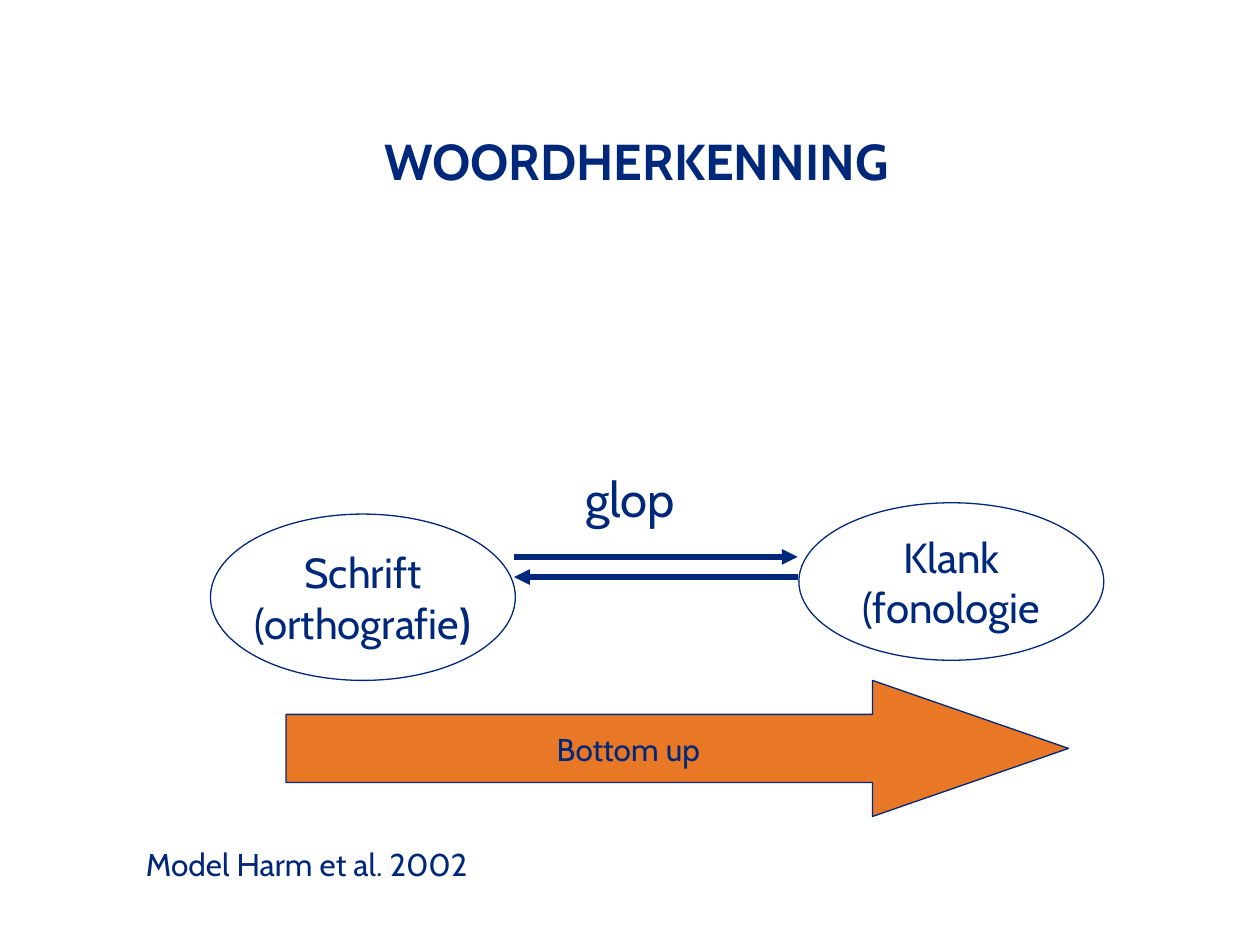
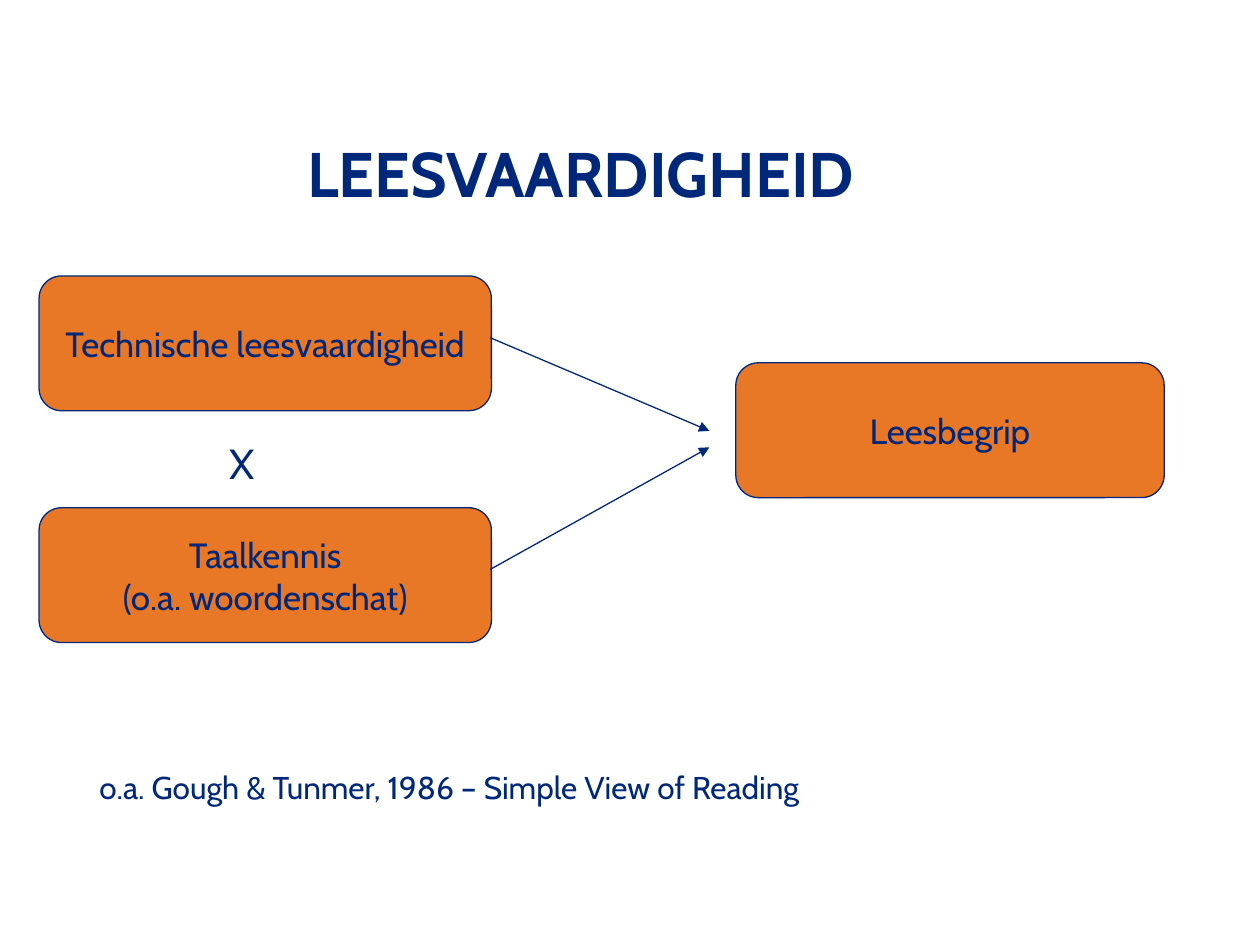
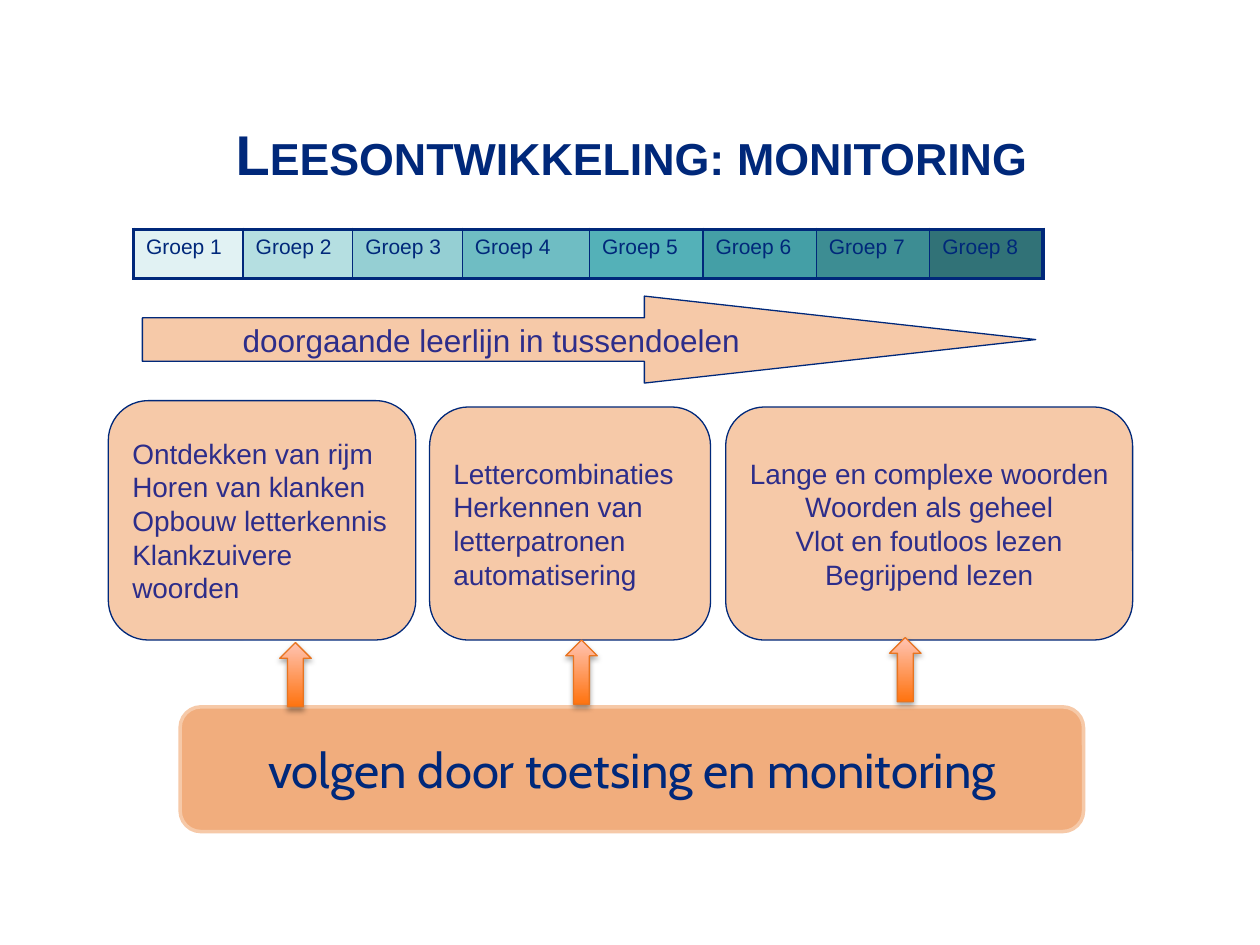
from lxml.etree import SubElement as Sub
from pptx import Presentation
from pptx.dml.color import RGBColor as RGB
from pptx.enum.shapes import MSO_CONNECTOR as Link, MSO_SHAPE as Kind
from pptx.enum.text import MSO_ANCHOR as Anchor, MSO_AUTO_SIZE as Fit, PP_ALIGN as Align
from pptx.oxml.ns import qn
from pptx.util import Inches, Pt

# Shared look
NAVY = RGB(0x00, 0x28, 0x7A)
INDIGO = RGB(0x2D, 0x2D, 0x8A)
ORANGE = RGB(0xE8, 0x77, 0x26)
PEACH = RGB(0xF6, 0xC9, 0xA8)
APRICOT = RGB(0xF1, 0xAD, 0x7D)
RUST = RGB(0xE8, 0x74, 0x20)
FLAME = RGB(0xFF, 0x73, 0x0F)
BLUSH = RGB(0xFF, 0xC4, 0xB3)
TEALS = [RGB.from_string(h) for h in (
    "E1F2F3", "B5DFE1", "95CFD3", "6FBDC3", "54B1B8", "449FA6", "3D8D93", "317277")]
CABIN, ARIAL = "Cabin", "Arial"

# Grid of 100 columns by 75 rows
WIDE, HIGH = Inches(10), Inches(7.5)
COL, ROW = WIDE / 100, HIGH / 75


def grid(x, y, w, h):
    return int(x * COL), int(y * ROW), int(w * COL), int(h * ROW)


def style(par, size, face=CABIN, color=NAVY, align=Align.CENTER):
    par.alignment = align
    par.font.size, par.font.name = Pt(size), face
    par.font.color.rgb = color


def write(frame, lines, size, face=CABIN, color=NAVY, align=Align.CENTER, wrap=True):
    frame.word_wrap = wrap
    for i, line in enumerate(lines):
        par = frame.add_paragraph() if i else frame.paragraphs[0]
        par.add_run().text = line
        style(par, size, face, color, align)


def title(slide, text, at, size, face=CABIN, small=False, flush=True):
    head = slide.shapes.title
    head.left, head.top, head.width, head.height = grid(*at)
    frame = head.text_frame
    frame.auto_size, frame.vertical_anchor = Fit.NONE, Anchor.MIDDLE
    if flush:
        frame.margin_left = frame.margin_top = frame.margin_bottom = 0
    write(frame, [text], size, face)
    par = frame.paragraphs[0]
    par.font.bold = True
    if small:
        par.runs[0]._r.get_or_add_rPr().set("cap", "small")


def label(slide, text, at, size, align=Align.LEFT):
    box = slide.shapes.add_textbox(*grid(*at))
    write(box.text_frame, [text], size, align=align)


def node(slide, kind, at, fill=None, line=NAVY, weight=0.75, adj=()):
    shape = slide.shapes.add_shape(kind, *grid(*at))
    shape.shadow.inherit = False
    if fill is None:
        shape.fill.background()
    else:
        shape.fill.solid()
        shape.fill.fore_color.rgb = fill
    shape.line.color.rgb, shape.line.width = line, Pt(weight)
    for i, value in enumerate(adj):
        shape.adjustments[i] = value
    shape.text_frame.vertical_anchor = Anchor.MIDDLE
    return shape


def arrow(slide, start, end, weight):
    (ax, ay, bx, by) = grid(*start, *end)
    link = slide.shapes.add_connector(Link.STRAIGHT, ax, ay, bx, by)
    link.line.color.rgb, link.line.width = NAVY, Pt(weight)
    props = link.element.spPr
    Sub(props.find(qn("a:ln")), qn("a:tailEnd"), type="triangle")
    Sub(props, qn("a:effectLst"))


def riser(slide, at):
    """Upward block arrow with a gradient and a soft shadow."""
    shape = node(slide, Kind.UP_ARROW, at, line=RUST)
    shape.fill.gradient()
    shape.fill.gradient_angle = 90
    for stop, color in zip(shape.fill.gradient_stops, (FLAME, BLUSH)):
        stop.color.rgb = color
    shade = Sub(shape.element.spPr.find(qn("a:effectLst")), qn("a:outerShdw"),
                blurRad=str(Pt(3.1)), dist=str(Pt(1.8)), dir="5400000", rotWithShape="0")
    Sub(Sub(shade, qn("a:srgbClr"), val="000000"), qn("a:alpha"), val="35000")


def edge(cell, side, weight):
    line = Sub(cell._tc.get_or_add_tcPr(), qn("a:" + side), w=str(Pt(weight)))
    Sub(Sub(line, qn("a:solidFill")), qn("a:srgbClr"), val=str(NAVY))


def groups(slide, at, widths):
    """One row of school years, from light to dark."""
    last = len(widths) - 1
    table = slide.shapes.add_table(1, last + 1, *grid(*at)).table
    table.first_row = table.horz_banding = False
    for i, (width, color) in enumerate(zip(widths, TEALS)):
        table.columns[i].width = int(width * COL)
        cell = table.cell(0, i)
        write(cell.text_frame, [f"Groep {i + 1}"], 12, ARIAL, align=Align.LEFT)
        edge(cell, "lnL", 1 if i else 2.25)
        edge(cell, "lnR", 1 if i < last else 2.25)
        edge(cell, "lnT", 2.25)
        edge(cell, "lnB", 2.25)
        cell.fill.solid()
        cell.fill.fore_color.rgb = color


def words(slide):
    title(slide, "woordherkenning", (6, 6.1, 90, 12.5), 36, small=True)
    # Script and sound
    script = node(slide, Kind.OVAL, (16.7, 40.8, 24.2, 13.2)).text_frame
    write(script, ["Schrift", "(orthografie"], 24, wrap=False)
    close = script.paragraphs[1].add_run()
    close.text, close.font.bold = ")", True
    sound = node(slide, Kind.OVAL, (63.4, 39.9, 24.2, 12.5))
    write(sound.text_frame, ["Klank", "(fonologie"], 24, wrap=False)
    arrow(slide, (40.8, 44.2), (63.3, 44.2), 3)
    arrow(slide, (63.3, 45.8), (40.8, 45.8), 3)
    label(slide, "glop", (30, 36.7, 40, 5.7), 28, Align.CENTER)
    # Direction and citation
    path = node(slide, Kind.RIGHT_ARROW, (22.7, 54, 62.1, 10.8), ORANGE, adj=(0.5, 1.44))
    write(path.text_frame, ["Bottom up"], 18, wrap=False)
    label(slide, "Model Harm et al. 2002", (10.6, 66.6, 74.2, 4), 18)


def skill(slide):
    title(slide, "LEESVAARDIGHEID", (3.1, 7.8, 87, 11.8), 36)
    # Factors and outcome
    for x, y, width, lines in (
            (3.1, 21.9, 35.9, ["Technische leesvaardigheid"]),
            (3.1, 40.3, 35.9, ["Taalkennis", "(o.a. woordenschat)"]),
            (58.4, 28.8, 34, ["Leesbegrip"])):
        box = node(slide, Kind.ROUNDED_RECTANGLE, (x, y, width, 10.7), ORANGE)
        write(box.text_frame, lines, 20, wrap=False)
    arrow(slide, (38.9, 45.2), (56.3, 35.5), 0.75)
    arrow(slide, (38.9, 26.8), (56.3, 34.2), 0.75)
    label(slide, "X", (17.2, 34.2, 4.2, 5), 24)
    label(slide, "o.a. Gough & Tunmer, 1986 – Simple View of Reading",
          (6.9, 60.5, 59.1, 4), 18)


def growth(slide):
    title(slide, "Leesontwikkeling: monitoring", (5.1, 9.3, 90, 5.7), 32, ARIAL,
          small=True, flush=False)
    groups(slide, (10.6, 18.2, 72.2, 3.9), [8.7] * 3 + [10.1] + [9] * 4)
    # Learning line
    path = node(slide, Kind.RIGHT_ARROW, (11.3, 23.5, 70.9, 6.9), PEACH, adj=(0.5, 4.5))
    write(path.text_frame, ["doorgaande leerlijn in tussendoelen"], 18, ARIAL, INDIGO,
          wrap=False)
    # Stages
    for at, align, lines in (
            ((8.6, 31.8, 24.4, 19), Align.LEFT,
             ["Ontdekken van rijm", "Horen van klanken", "Opbouw letterkennis",
              "Klankzuivere woorden"]),
            ((34.1, 32.3, 22.3, 18.5), Align.LEFT,
             ["Lettercombinaties", "Herkennen van letterpatronen", "automatisering"]),
            ((57.6, 32.3, 32.3, 18.5), Align.CENTER,
             ["Lange en complexe woorden", "Woorden als geheel",
              "Vlot en foutloos lezen", "Begrijpend lezen"])):
        stage = node(slide, Kind.FLOWCHART_ALTERNATE_PROCESS, at, PEACH)
        write(stage.text_frame, lines, 16, ARIAL, INDIGO, align)
    # Monitoring base
    base = node(slide, Kind.ROUNDED_RECTANGLE, (14.3, 56.1, 71.7, 9.9), APRICOT, PEACH, 2)
    write(base.text_frame, ["volgen door toetsing en monitoring"], 28)
    for i, x in enumerate((22.2, 44.9, 70.6)):
        riser(slide, (x, 51 - 0.2 * i, 2.5, 5.1))


def main():
    deck = Presentation()
    deck.slide_width, deck.slide_height = WIDE, HIGH
    for build in (words, skill, growth):
        build(deck.slides.add_slide(deck.slide_layouts[5]))
    deck.save("out.pptx")


if __name__ == "__main__":
    main()
